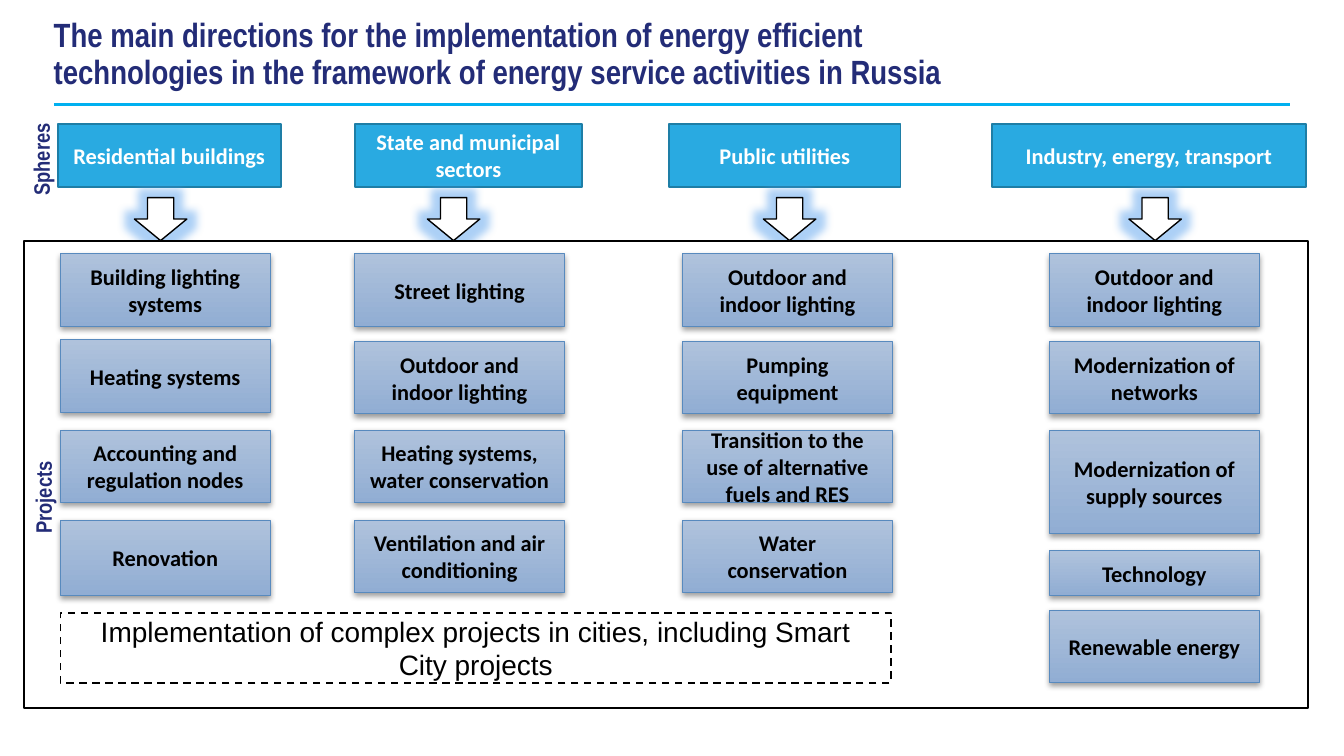
from lxml import etree
from pptx import Presentation
from pptx.dml.color import RGBColor
from pptx.enum import dml, shapes, text
from pptx.oxml.ns import qn
from pptx.util import Inches, Pt

NAVY, SKY, BLACK, WHITE = "232C77", "29AAE1", "000000", "FFFFFF"
TITLE = ("The main directions for the implementation of energy efficient "
         "technologies in the framework of energy service activities in Russia")
COMPLEX = "Implementation of complex projects in cities, including Smart City projects"

ROWS = [(1.89, 0.54), (2.54, 0.54), (3.2, 0.54), (3.87, 0.54)]
RESIDENTIAL_ROWS = [ROWS[0], (2.53, 0.54), ROWS[2], (3.87, 0.56)]
INDUSTRY_ROWS = ROWS[:2] + [(3.2, 0.77), (4.1, 0.33), (4.54, 0.54)]
PROJECT_WIDTH = 1.56
BOX_INSETS = (0.11, 0.06, 0.11, 0.06)

# sphere, its left and width, arrow left, projects left, rows, projects
SPHERES = [
    ("Residential buildings", 0.43, 1.66, 1.0, 0.45, RESIDENTIAL_ROWS,
     ["Building lighting systems", "Heating systems",
      "Accounting and regulation nodes", "Renovation"]),
    ("State and municipal sectors", 2.64, 1.69, 3.18, 2.64, ROWS,
     ["Street lighting", "Outdoor and indoor lighting",
      "Heating systems, water conservation", "Ventilation and air conditioning"]),
    ("Public utilities", 4.98, 1.72, 5.68, 5.08, ROWS,
     ["Outdoor and indoor lighting", "Pumping equipment",
      "Transition to the use of alternative fuels and RES", "Water conservation"]),
    ("Industry, energy, transport", 7.38, 2.34, 8.4, 7.81, INDUSTRY_ROWS,
     ["Outdoor and indoor lighting", "Modernization of networks",
      "Modernization of supply sources", "Technology", "Renewable energy"]),
]
# label, left, top, width, height before the quarter turn
SIDE_LABELS = [("Projects", -0.23, 3.37, 1.1, 0.3), ("Spheres", -0.07, 1.03, 0.75, 0.3)]


def rgb(code):
    return RGBColor.from_string(code)


def write(shape, words, size=12, font="Calibri", color=BLACK, bold=True,
          align=text.PP_ALIGN.CENTER, anchor=text.MSO_ANCHOR.MIDDLE,
          insets=BOX_INSETS, spacing=None):
    frame = shape.text_frame
    frame.word_wrap = True
    frame.vertical_anchor = anchor
    (frame.margin_left, frame.margin_top,
     frame.margin_right, frame.margin_bottom) = map(Inches, insets)
    paragraph = frame.paragraphs[0]
    paragraph.alignment = align
    paragraph.line_spacing = spacing
    run = paragraph.add_run()
    run.text = words
    run.font.size, run.font.name, run.font.bold = Pt(size), font, bold
    run.font.color.rgb = rgb(color)


def add_box(place, fill, line, weight, preset=shapes.MSO_SHAPE.RECTANGLE):
    """Add a preset shape; a pair of fill colours runs from top to bottom."""
    box = slide.shapes.add_shape(preset, *map(Inches, place))
    box.shadow.inherit = False
    if isinstance(fill, tuple):
        box.fill.gradient()
        box.fill.gradient_angle = 270
        for stop, color in zip(box.fill.gradient_stops, fill):
            stop.color.rgb = rgb(color)
    else:
        box.fill.solid()
        box.fill.fore_color.rgb = rgb(fill)
    box.line.color.rgb = rgb(line)
    box.line.width = Pt(weight)
    return box


def add_effect(shape, kind, color, opacity, **lengths):
    effects = shape._element.spPr.find(qn("a:effectLst"))
    effect = etree.SubElement(effects, qn(f"a:{kind}"),
                              {name: str(value) for name, value in lengths.items()})
    tint = etree.SubElement(effect, qn("a:srgbClr"), val=color)
    etree.SubElement(tint, qn("a:alpha"), val=str(opacity * 1000))


prs = Presentation()
prs.slide_width = Inches(10)
prs.slide_height = prs.slide_width * 9 // 16
slide = prs.slides.add_slide(prs.slide_layouts[6])

rule = slide.shapes.add_connector(
    shapes.MSO_CONNECTOR.STRAIGHT, *map(Inches, (0.4, 0.78, 9.6, 0.78)))
rule.line.color.rgb = rgb("00B0F0")
rule.line.width = Pt(1.5)
etree.SubElement(rule._element.spPr, qn("a:effectLst"))

title = slide.shapes.add_textbox(*map(Inches, (0.4, 0.21, 7.13, 0.52)))
write(title, TITLE, size=18, font="Arial Narrow", color=NAVY,
      align=text.PP_ALIGN.LEFT, anchor=text.MSO_ANCHOR.BOTTOM,
      insets=(0, 0.05, 0.1, 0.05), spacing=0.9)

for sphere, left, width, arrow_left, *_ in SPHERES:
    write(add_box((left, 0.92, width, 0.47), SKY, "1E7EA6", 1), sphere, color=WHITE)
    arrow = add_box((arrow_left, 1.47, 0.39, 0.32), WHITE, BLACK, 0.75,
                    shapes.MSO_SHAPE.DOWN_ARROW)
    add_effect(arrow, "glow", "5AA2EE", 50, rad=Pt(9))

add_box((0.18, 1.79, 9.55, 3.48), WHITE, BLACK, 1)

for *_, left, rows, projects in SPHERES:
    for (top, height), project in zip(rows, projects):
        box = add_box((left, top, PROJECT_WIDTH, height),
                      ("AFC2DC", "91ADD3"), "588ABE", 0.5)
        add_effect(box, "outerShdw", BLACK, 38, blurRad=Pt(3.1), dist=Pt(1.6),
                   dir=90 * 60000, algn="ctr", rotWithShape=0)
        write(box, project)

for label, *place in SIDE_LABELS:
    side = slide.shapes.add_textbox(*map(Inches, place))
    side.rotation = 270
    write(side, label, font="Arial Narrow", color=NAVY, align=text.PP_ALIGN.LEFT,
          anchor=text.MSO_ANCHOR.TOP, insets=(0.1, 0.05, 0, 0.05))

complex_box = add_box((0.45, 4.56, 6.18, 0.52), WHITE, BLACK, 1)
complex_box.line.dash_style = dml.MSO_LINE.DASH
write(complex_box, COMPLEX, size=15, font="Arial", bold=False,
      insets=(0.1, 0.05, 0.1, 0.05))

prs.save("out.pptx")
